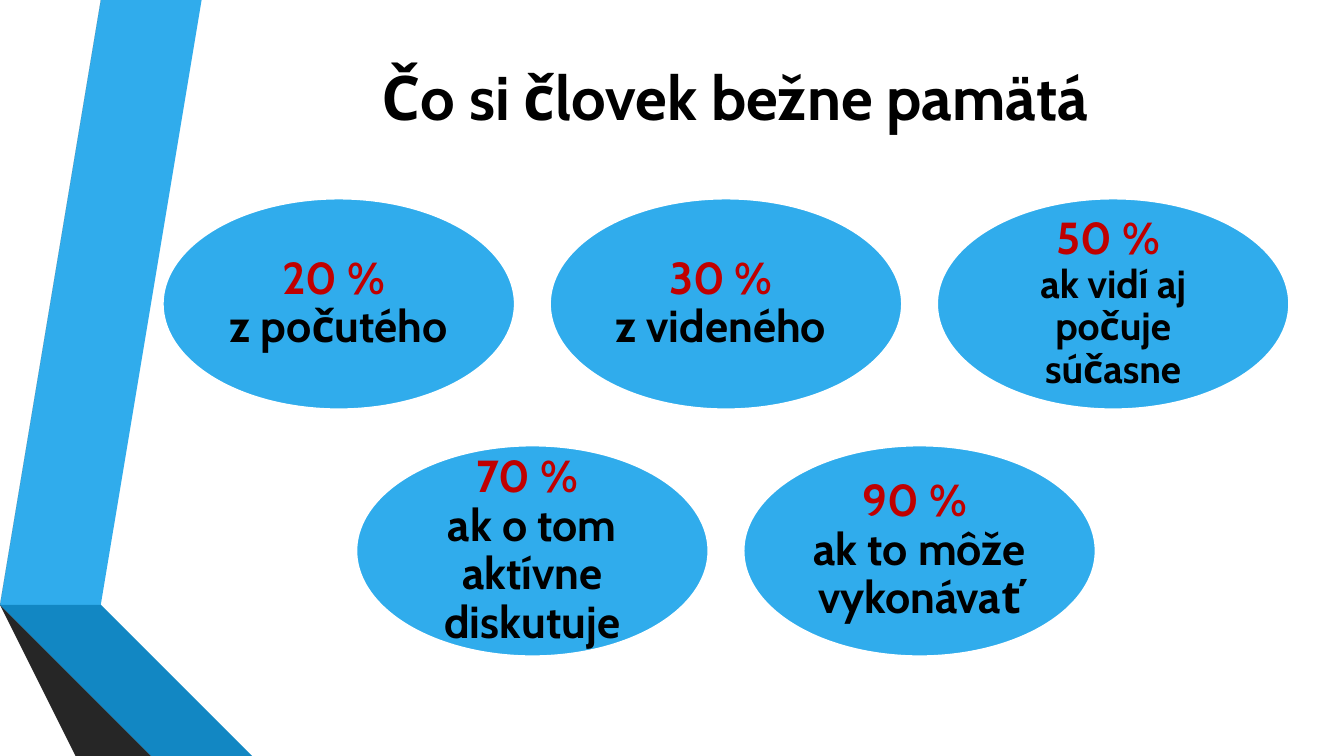
from dataclasses import dataclass

from pptx import Presentation
from pptx.dml.color import RGBColor
from pptx.enum.shapes import MSO_SHAPE
from pptx.enum.text import MSO_ANCHOR, PP_ALIGN
from pptx.util import Inches, Pt

OVAL = MSO_SHAPE.OVAL
MIDDLE = MSO_ANCHOR.MIDDLE
CENTER = PP_ALIGN.CENTER


@dataclass(frozen=True)
class Theme:
    font: str = "Cabin"
    black: str = "000000"
    white: str = "FFFFFF"
    red: str = "C00000"
    blue: str = "30ACEC"
    ocean: str = "1287C3"
    navy: str = "0C5A82"
    gray: str = "595959"
    dark: str = "404040"
    coal: str = "262626"
    title: int = 44
    large: int = 32
    small: int = 28


class Deck:
    """Holds the theme and the current slide."""

    def __init__(self, theme, slide):
        self.theme = theme
        self.slide = slide

    def paint(self, shape, color):
        shape.shadow.inherit = False
        shape.fill.solid()
        shape.fill.fore_color.rgb = RGBColor.from_string(color)

    def label(self, shape, lines, inset, spacing):
        """Fill a shape with (text, size, color) lines."""
        frame = shape.text_frame
        frame.word_wrap = True
        frame.vertical_anchor = MIDDLE
        frame.margin_left = frame.margin_right = Inches(inset)
        frame.margin_top = frame.margin_bottom = Inches(inset)
        frame.text = "\n".join(text for text, _, _ in lines)
        for para, (_, size, color) in zip(frame.paragraphs, lines):
            para.alignment = CENTER
            para.line_spacing = spacing
            font = para.runs[0].font
            font.name = self.theme.font
            font.size = Pt(size)
            font.bold = True
            font.color.rgb = RGBColor.from_string(color)

    def band(self, points, color):
        pen = self.slide.shapes.build_freeform(*points[0], scale=Inches(1))
        pen.add_line_segments(points[1:], close=True)
        shape = pen.convert_to_shape()
        self.paint(shape, color)
        shape.line.fill.background()

    def title(self, text, left, top, width, height):
        box = self.slide.shapes.add_textbox(
            Inches(left), Inches(top), Inches(width), Inches(height))
        self.label(box, [(text, self.theme.title, self.theme.black)], 0.05, 1.0)

    def oval(self, left, top, width, height, share, text, size):
        shape = self.slide.shapes.add_shape(
            OVAL, Inches(left), Inches(top), Inches(width), Inches(height))
        self.paint(shape, self.theme.blue)
        shape.line.color.rgb = RGBColor.from_string(self.theme.white)
        shape.line.width = Pt(1.25)
        lines = [(share, self.theme.large, self.theme.red),
                 (text, size, self.theme.black)]
        self.label(shape, lines, 0.13, 0.9)


def main():
    theme = Theme()
    prs = Presentation()
    prs.slide_width = Inches(13.33)
    prs.slide_height = Inches(7.5)
    deck = Deck(theme, prs.slides.add_slide(prs.slide_layouts[6]))

    # Folded ribbons on the left edge
    bands = [
        (theme.blue, [(0.5, 5.78), (0.77, 5.83), (1.73, 0), (1.45, 0)]),
        (theme.gray, [(1.39, 0), (1.11, 0), (0.16, 5.73), (0.44, 5.77)]),
        (theme.coal, [(0.16, 5.73), (1.45, 7.5), (1.51, 7.5)]),
        (theme.navy, [(0.5, 5.79), (2.08, 7.5), (2.14, 7.5)]),
        (theme.ocean, [(0.5, 5.78), (0.5, 5.79), (2.14, 7.5), (2.83, 7.5),
                       (0.77, 5.83)]),
        (theme.dark, [(2.02, 7.5), (0.48, 5.83), (0.43, 5.78), (0.44, 5.77),
                      (0.16, 5.73), (1.51, 7.5)]),
    ]
    for color, points in bands:
        deck.band(points, color)

    # Heading
    deck.title("Čo si človek bežne pamätá", 1.81, 0.34, 10.96, 1.23)

    # Ovals: three above, two centred below
    rows = [
        [("20 % ", "z počutého", theme.large),
         ("30 % ", "z videného ", theme.large),
         ("50 % ", "ak vidí aj počuje súčasne", theme.small)],
        [("70 % ", "ak o tom aktívne diskutuje", theme.large),
         ("90 % ", "ak to môže vykonávať", theme.large)],
    ]
    width, height = 3.49, 2.09
    middle, top = 7.2, 1.97
    pitch, step = 3.84, 2.45
    for r, row in enumerate(rows):
        first = middle - (pitch * (len(row) - 1) + width) / 2
        for c, (share, text, size) in enumerate(row):
            deck.oval(first + c * pitch, top + r * step, width, height,
                      share, text, size)

    prs.save("out.pptx")


if __name__ == "__main__":
    main()
